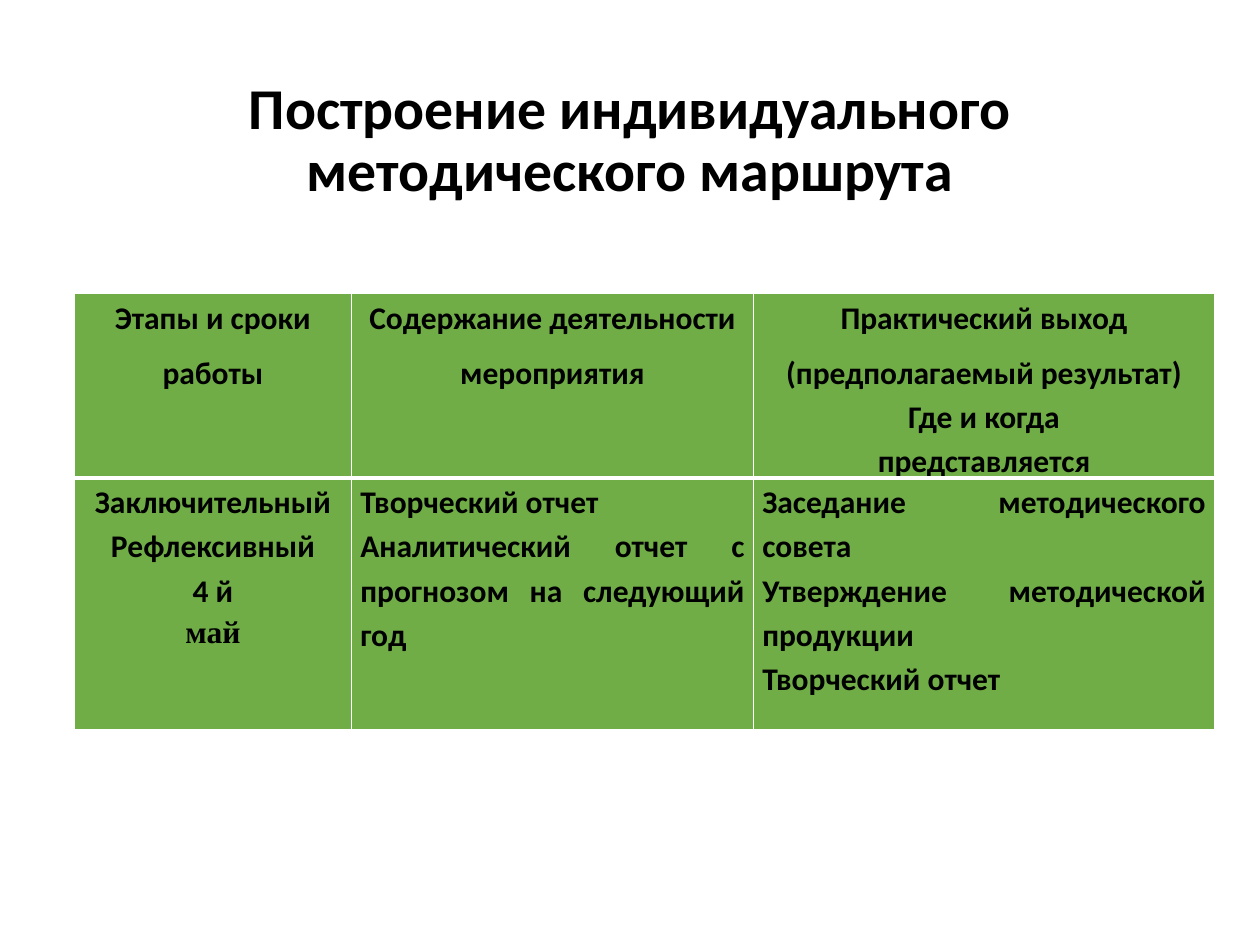
from dataclasses import dataclass

from lxml import etree
from pptx import Presentation
from pptx import util as u
from pptx.dml.color import RGBColor
from pptx.enum import text as t
from pptx.oxml import ns

WIDE, HIGH = 10, 7.5
MID, JUST = t.PP_ALIGN.CENTER, t.PP_ALIGN.JUSTIFY


@dataclass(frozen=True)
class Theme:
    ink: str = "000000"
    green: str = "70AD47"
    rule: str = "FFFFFF"
    font: str = "Calibri"
    serif: str = "Times New Roman"
    head: int = 33
    body: int = 18
    thin: int = 1
    thick: int = 3


LOOK = Theme()

COLS = (2.2, 3.19, 3.66)
ROWS = (1.46, 2)
HEADS = (
    ("Этапы и сроки", "работы"),
    ("Содержание деятельности", "мероприятия"),
    ("Практический выход", "(предполагаемый результат)",
     "Где и когда", "представляется"),
)
STAGE = (
    ("Заключительный", "Рефлексивный", "4 й", "май"),
    ("Творческий отчет",
     "Аналитический отчет с прогнозом на следующий год"),
    ("Заседание методического совета",
     "Утверждение методической продукции", "Творческий отчет"),
)


def write(para, words, size=LOOK.body, font=LOOK.font, align=MID,
          lead=1.15, gap=0):
    para.alignment, para.line_spacing = align, lead
    para.space_before = u.Pt(gap)
    run = para.add_run()
    run.text = words
    run.font.name, run.font.size, run.font.bold = font, u.Pt(size), True
    run.font.color.rgb = RGBColor.from_string(LOOK.ink)


def edge(cell, **sides):
    """Draw cell borders, given as side=points, ahead of the cell's fill."""
    props = cell._tc.get_or_add_tcPr()
    for spot, (side, width) in enumerate(sides.items()):
        line = etree.Element(ns.qn(f"a:ln{side}"), w=str(u.Pt(width)))
        fill = etree.SubElement(line, ns.qn("a:solidFill"))
        etree.SubElement(fill, ns.qn("a:srgbClr"), val=LOOK.rule)
        props.insert(spot, line)


def title(slide, words):
    box = slide.shapes.add_textbox(
        u.Inches(0.069 * WIDE), u.Inches(0.4),
        u.Inches(0.862 * WIDE), u.Inches(1.45))
    frame = box.text_frame
    frame.word_wrap = True
    frame.vertical_anchor = t.MSO_ANCHOR.MIDDLE
    write(frame.paragraphs[0], words, size=LOOK.head, lead=0.9)


def fill(cell, lines, align, gap):
    cell.fill.solid()
    cell.fill.fore_color.rgb = RGBColor.from_string(LOOK.green)
    cell.margin_left = cell.margin_right = u.Inches(0.07)
    cell.margin_top = cell.margin_bottom = 0
    frame = cell.text_frame
    for i, words in enumerate(lines):
        para = frame.add_paragraph() if i else frame.paragraphs[0]
        write(para, words, align=align, gap=gap if i == 1 else 0,
              font=LOOK.serif if words == "май" else LOOK.font)


def plan(slide):
    grid = slide.shapes.add_table(
        len(ROWS), len(COLS), u.Inches(0.59), u.Inches(2.33),
        u.Inches(sum(COLS)), u.Inches(sum(ROWS))).table
    for col, width in zip(grid.columns, COLS):
        col.width = u.Inches(width)
    for r, texts in enumerate((HEADS, STAGE)):
        grid.rows[r].height = u.Inches(ROWS[r])
        top, base = ((LOOK.thick, LOOK.thin) if r
                     else (LOOK.thin, LOOK.thick))
        for c, lines in enumerate(texts):
            cell = grid.cell(r, c)
            fill(cell, lines, JUST if r and c else MID, 0 if r else 6)
            edge(cell, L=LOOK.thin, R=LOOK.thin, T=top, B=base)


def main():
    deck = Presentation()
    deck.slide_width, deck.slide_height = u.Inches(WIDE), u.Inches(HIGH)
    slide = deck.slides.add_slide(deck.slide_layouts[6])
    title(slide, "Построение индивидуального методического маршрута")
    plan(slide)
    deck.save("out.pptx")


if __name__ == "__main__":
    main()
